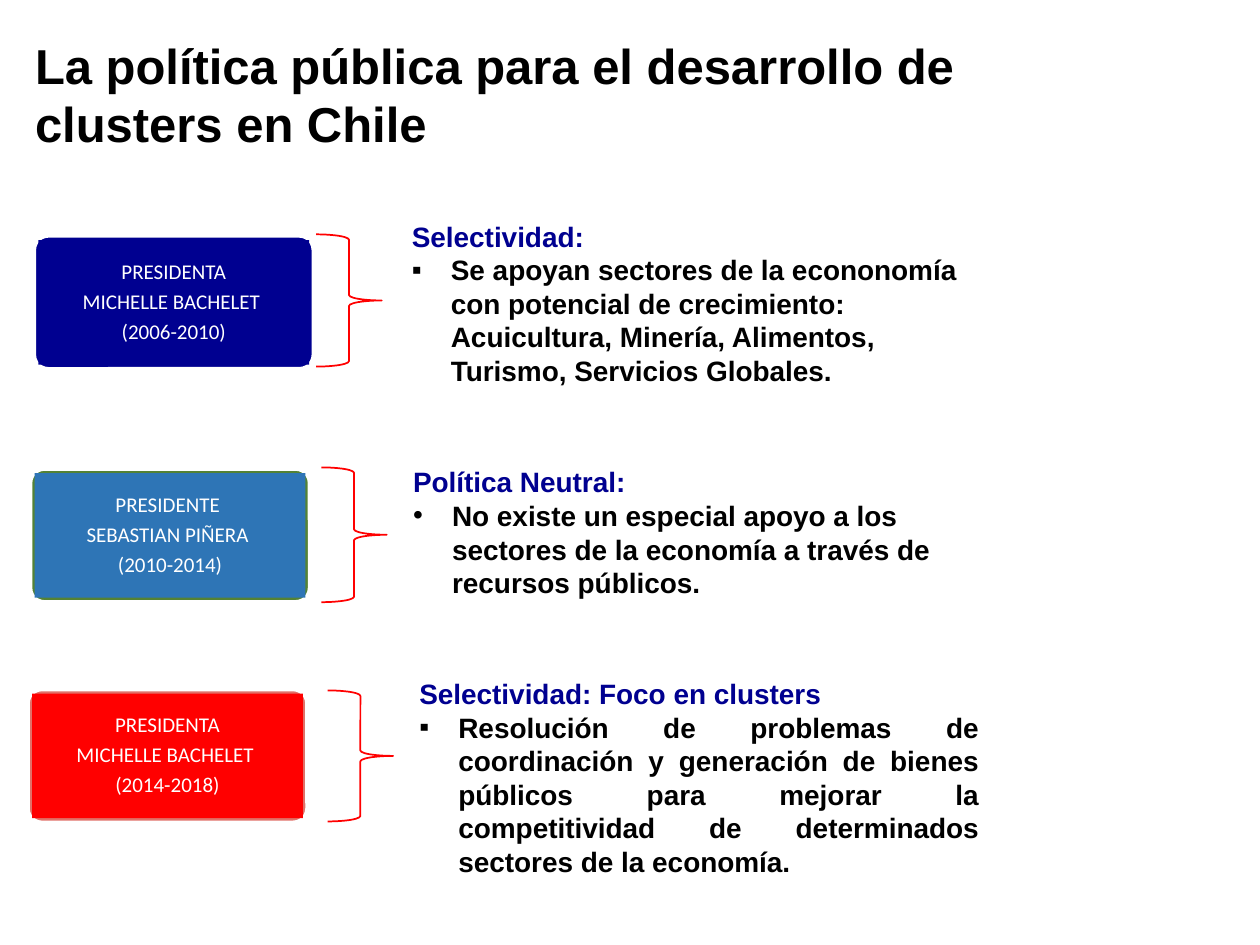
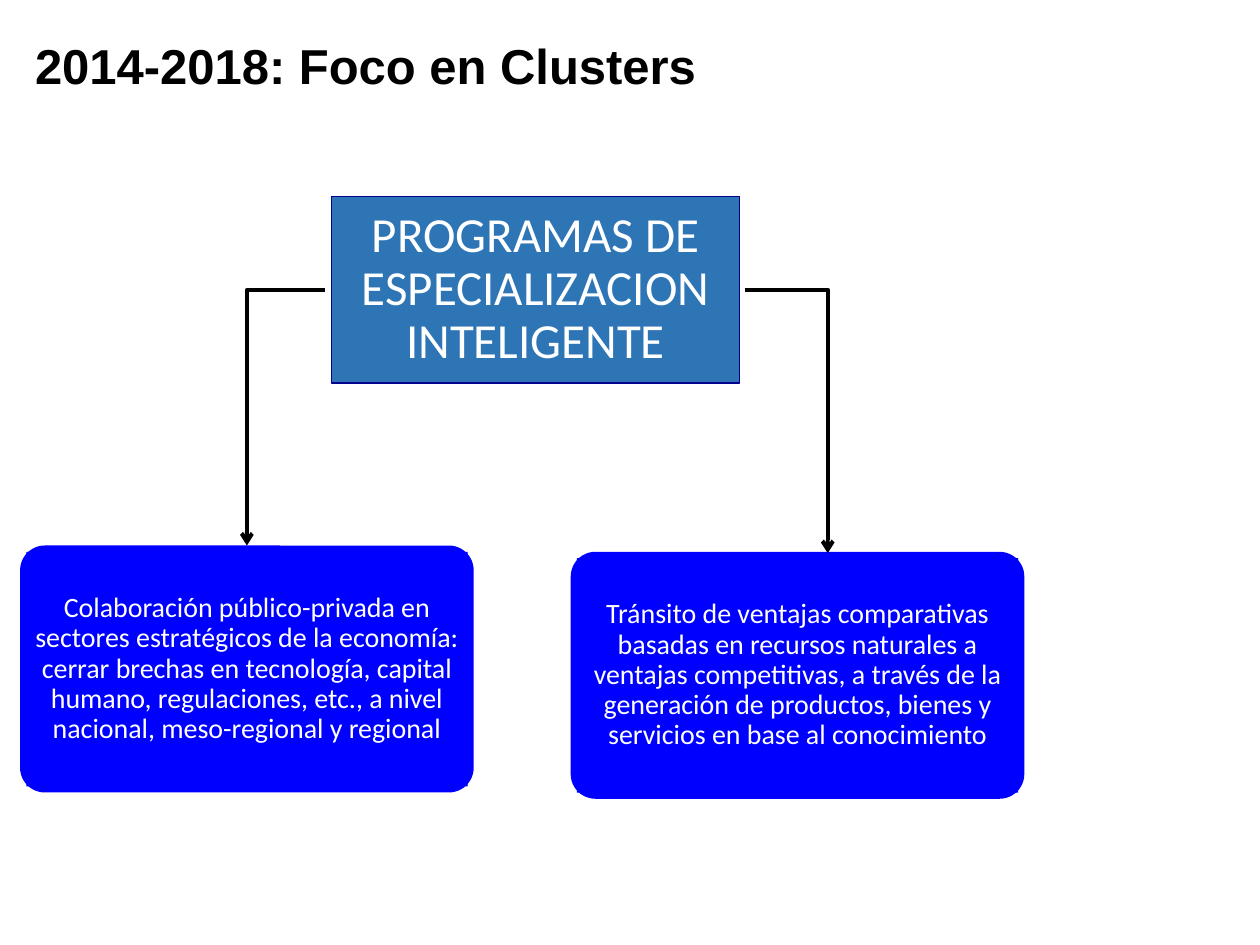
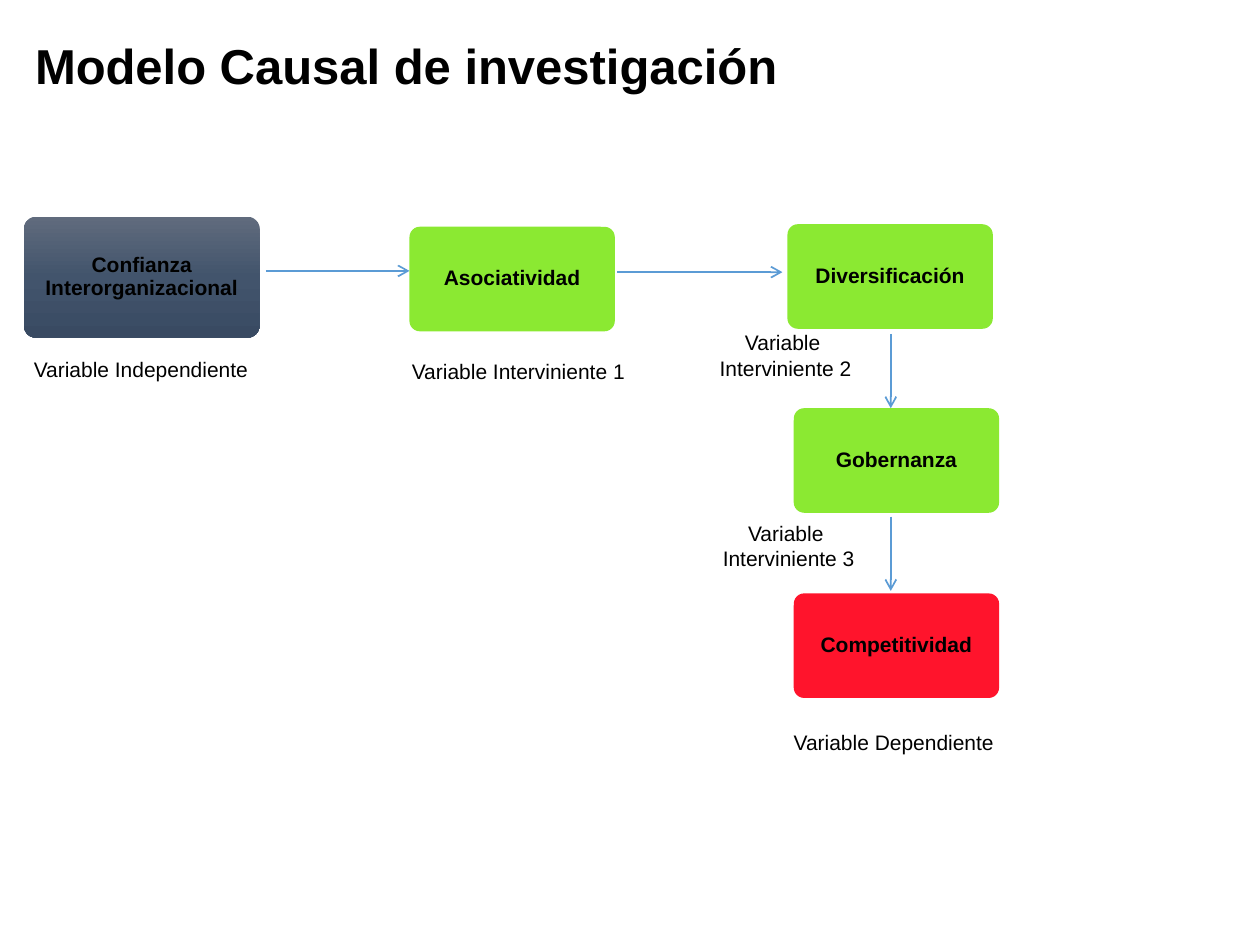
from copy import deepcopy

from lxml import etree
from pptx import Presentation
from pptx.dml.color import RGBColor
from pptx.enum.shapes import MSO_CONNECTOR, MSO_SHAPE
from pptx.enum.text import MSO_ANCHOR, MSO_AUTO_SIZE, PP_ALIGN
from pptx.oxml.ns import qn
from pptx.util import Inches, Pt

ROUNDED = MSO_SHAPE.ROUNDED_RECTANGLE
RECTANGLE = MSO_SHAPE.RECTANGLE
BRACE = MSO_SHAPE.RIGHT_BRACE
STRAIGHT = MSO_CONNECTOR.STRAIGHT
ELBOW = MSO_CONNECTOR.ELBOW
LEFT = PP_ALIGN.LEFT
CENTER = PP_ALIGN.CENTER
JUSTIFY = PP_ALIGN.JUSTIFY
MIDDLE = MSO_ANCHOR.MIDDLE
FIT = MSO_AUTO_SIZE.SHAPE_TO_FIT_TEXT

BLACK = RGBColor(0x00, 0x00, 0x00)
WHITE = RGBColor(0xFF, 0xFF, 0xFF)
NAVY = RGBColor(0x00, 0x00, 0x90)
BLUE = RGBColor(0x00, 0x00, 0xFF)
STEEL = RGBColor(0x2E, 0x75, 0xB6)
SKY = RGBColor(0x5B, 0x9B, 0xD5)
OLIVE = RGBColor(0x54, 0x82, 0x35)
SALMON = RGBColor(0xE1, 0x70, 0x68)
RED = RGBColor(0xFF, 0x00, 0x00)
LIME = RGBColor(0x8B, 0xE9, 0x32)
CRIMSON = RGBColor(0xFF, 0x14, 0x2C)
SLATE_STOPS = [
    (0, RGBColor(0x60, 0x6B, 0x7D)),
    (0.5, RGBColor(0x42, 0x54, 0x6C)),
    (1, RGBColor(0x39, 0x4A, 0x62)),
]


def add_block(page, kind, at, fill=None, line=None, width=1, lines=(), **style):
    block = page.shapes.add_shape(kind, *[Inches(value) for value in at])
    block.shadow.inherit = False
    if fill is None:
        block.fill.background()
    else:
        block.fill.solid()
        block.fill.fore_color.rgb = fill
    if line is None:
        block.line.fill.background()
    else:
        block.line.color.rgb = line
        block.line.width = Pt(width)
    if kind == ROUNDED:
        block.adjustments[0] = 0.1
    if lines:
        frame = block.text_frame
        frame.word_wrap = True
        frame.vertical_anchor = MIDDLE
        frame.margin_left = frame.margin_right = Inches(0.05)
        frame.margin_top = frame.margin_bottom = Inches(0.05)
        write(frame, lines, align=CENTER, **style)
        for paragraph in frame.paragraphs:
            paragraph.line_spacing = 0.9
            paragraph.space_after = Pt(0.35 * style["size"])
    return block


def write(frame, lines, size, name="Arial", color=BLACK, bold=False, align=LEFT):
    for index, line in enumerate(lines):
        paragraph = frame.paragraphs[0] if index == 0 else frame.add_paragraph()
        paragraph.text = line
        paragraph.alignment = align
        paragraph.font.size = Pt(size)
        paragraph.font.name = name
        paragraph.font.bold = bold
        paragraph.font.color.rgb = color


deck = Presentation()
deck.slide_width = Inches(10)
deck.slide_height = Inches(7.5)

pages = []
for title, width, height in [
    ("La política pública para el desarrollo de clusters en Chile", 8.14, 1.04),
    ("2014-2018: Foco en Clusters", 7.86, 0.57),
    ("Modelo Causal de investigación", 7.86, 0.57),
]:
    page = deck.slides.add_slide(deck.slide_layouts[6])
    box = page.shapes.add_textbox(Inches(0.18), Inches(0.23), Inches(width), Inches(height))
    box.text_frame.word_wrap = True
    box.text_frame.auto_size = FIT
    write(box.text_frame, [title], 28, bold=True)
    pages.append(page)
policy_page, focus_page, model_page = pages

BACHELET = "MICHELLE BACHELET "
presidents = [
    (0.28, 1.88, NAVY, NAVY, ["PRESIDENTA", BACHELET, "(2006-2010)"]),
    (0.25, 3.73, OLIVE, STEEL, ["PRESIDENTE ", "SEBASTIAN PIÑERA ", "(2010-2014)"]),
    (0.23, 5.48, SALMON, RED, ["PRESIDENTA", BACHELET, "(2014-2018)"]),
]
cards = [
    (policy_page, (left, top, 2.2, 1.04), rim, fill, WHITE, lines, 12)
    for left, top, rim, fill, lines in presidents
]

goals = [
    (0.16, 4.33, "Colaboración público-privada en sectores estratégicos de la economía: "
     "cerrar brechas en tecnología, capital humano, regulaciones, etc., a nivel "
     "nacional, meso-regional y regional"),
    (4.53, 4.38, "Tránsito de ventajas comparativas basadas en recursos naturales a "
     "ventajas competitivas, a través de la generación de productos, bienes y "
     "servicios en base al conocimiento"),
]
cards += [
    (focus_page, (left, top, 3.6, 1.96), BLUE, BLUE, None, [goal], 16)
    for left, top, goal in goals
]

for page, at, rim, fill, line, lines, size in cards:
    left, top, width, height = at
    inset = 0.025 * height
    inner = (left + inset, top + inset, width - 2 * inset, height - 2 * inset)
    add_block(page, ROUNDED, at, rim, line)
    add_block(page, RECTANGLE, inner, fill, lines=lines, size=size, name="Calibri", color=WHITE)

for left, top, height in [(2.51, 1.86, 1.05), (2.55, 3.71, 1.07), (2.6, 5.48, 1.04)]:
    add_block(policy_page, BRACE, (left, top, 0.52, height), line=RED)

policies = [
    ((3.17, 1.69, 4.85, 1.45), "Selectividad:", "▪", LEFT,
     "Se apoyan sectores de la econonomía con potencial de crecimiento: "
     "Acuicultura, Minería, Alimentos, Turismo, Servicios Globales."),
    ((3.18, 3.64, 4.86, 1.18), "Política Neutral:", "•", LEFT,
     "No existe un especial apoyo a los sectores de la economía a través de "
     "recursos públicos."),
    ((3.23, 5.32, 4.64, 1.72), "Selectividad: Foco en clusters", "▪", JUSTIFY,
     "Resolución de problemas de coordinación y generación de bienes públicos "
     "para mejorar la competitividad de determinados sectores de la economía."),
]
for at, heading, bullet, align, detail in policies:
    box = policy_page.shapes.add_textbox(*[Inches(value) for value in at])
    frame = box.text_frame
    frame.word_wrap = True
    frame.auto_size = FIT
    write(frame, [heading], 16, color=NAVY, bold=True)
    paragraph = frame.add_paragraph()
    paragraph.text = detail
    paragraph.alignment = align
    properties = paragraph._p.get_or_add_pPr()
    properties.set("marL", str(Inches(0.31)))
    properties.set("indent", str(-Inches(0.31)))
    etree.SubElement(properties, qn("a:buFont")).set("typeface", "Arial")
    etree.SubElement(properties, qn("a:buChar")).set("char", bullet)
    paragraph.font.size = Pt(16)
    paragraph.font.name = "Arial"
    paragraph.font.bold = True
    paragraph.font.color.rgb = BLACK

add_block(focus_page, RECTANGLE, (2.63, 1.56, 3.24, 1.48), STEEL, NAVY, 0.75,
          ["PROGRAMAS DE ESPECIALIZACION INTELIGENTE"],
          size=28, name="Calibri", color=WHITE)

trust = add_block(model_page, ROUNDED, (0.19, 1.72, 1.87, 0.96), SKY,
                  lines=["Confianza Interorganizacional"], size=12, bold=True)
trust.fill.gradient()
trust.fill.gradient_angle = 270
stop_list = trust.element.find(".//" + qn("a:gsLst"))
stop_list.insert(1, deepcopy(stop_list[0]))
for stop, (position, color) in zip(trust.fill.gradient_stops, SLATE_STOPS):
    stop.position = position
    stop.color.rgb = color

for left, top, fill, variable in [
    (3.25, 1.8, LIME, "Asociatividad"),
    (6.25, 1.78, LIME, "Diversificación"),
    (6.3, 3.24, LIME, "Gobernanza"),
    (6.3, 4.71, CRIMSON, "Competitividad"),
]:
    add_block(model_page, ROUNDED, (left, top, 1.63, 0.83), fill,
              lines=[variable], size=12, bold=True)

for at, lines, align in [
    ((0.17, 2.78, 1.93, 0.3), ["Variable Independiente"], LEFT),
    ((3.17, 2.8, 1.92, 0.3), ["Variable Interviniente 1"], LEFT),
    ((5.6, 2.57, 1.27, 0.5), ["Variable ", "Interviniente 2"], CENTER),
    ((5.63, 4.08, 1.26, 0.5), ["Variable ", "Interviniente 3"], CENTER),
    ((6.2, 5.74, 1.82, 0.3), ["Variable Dependiente"], LEFT),
]:
    box = model_page.shapes.add_textbox(*[Inches(value) for value in at])
    box.text_frame.word_wrap = False
    box.text_frame.auto_size = FIT
    write(box.text_frame, lines, 12, align=align)

for page, kind, ends, color, width in [
    (focus_page, ELBOW, (2.58, 2.3, 1.96, 4.33), BLACK, 2.25),
    (focus_page, ELBOW, (5.91, 2.3, 6.57, 4.39), BLACK, 2.25),
    (model_page, STRAIGHT, (2.11, 2.15, 3.25, 2.15), SKY, 1),
    (model_page, STRAIGHT, (4.9, 2.16, 6.21, 2.16), SKY, 1),
    (model_page, STRAIGHT, (7.07, 2.65, 7.07, 3.24), SKY, 1),
    (model_page, STRAIGHT, (7.07, 4.1, 7.07, 4.69), SKY, 1),
]:
    arrow = page.shapes.add_connector(kind, *[Inches(value) for value in ends])
    arrow.line.color.rgb = color
    arrow.line.width = Pt(width)
    properties = arrow.element.spPr
    if kind == ELBOW:
        properties.find(qn("a:prstGeom")).set("prst", "bentConnector2")
    etree.SubElement(properties.find(qn("a:ln")), qn("a:tailEnd")).set("type", "arrow")
    etree.SubElement(properties, qn("a:effectLst"))

deck.save("out.pptx")
